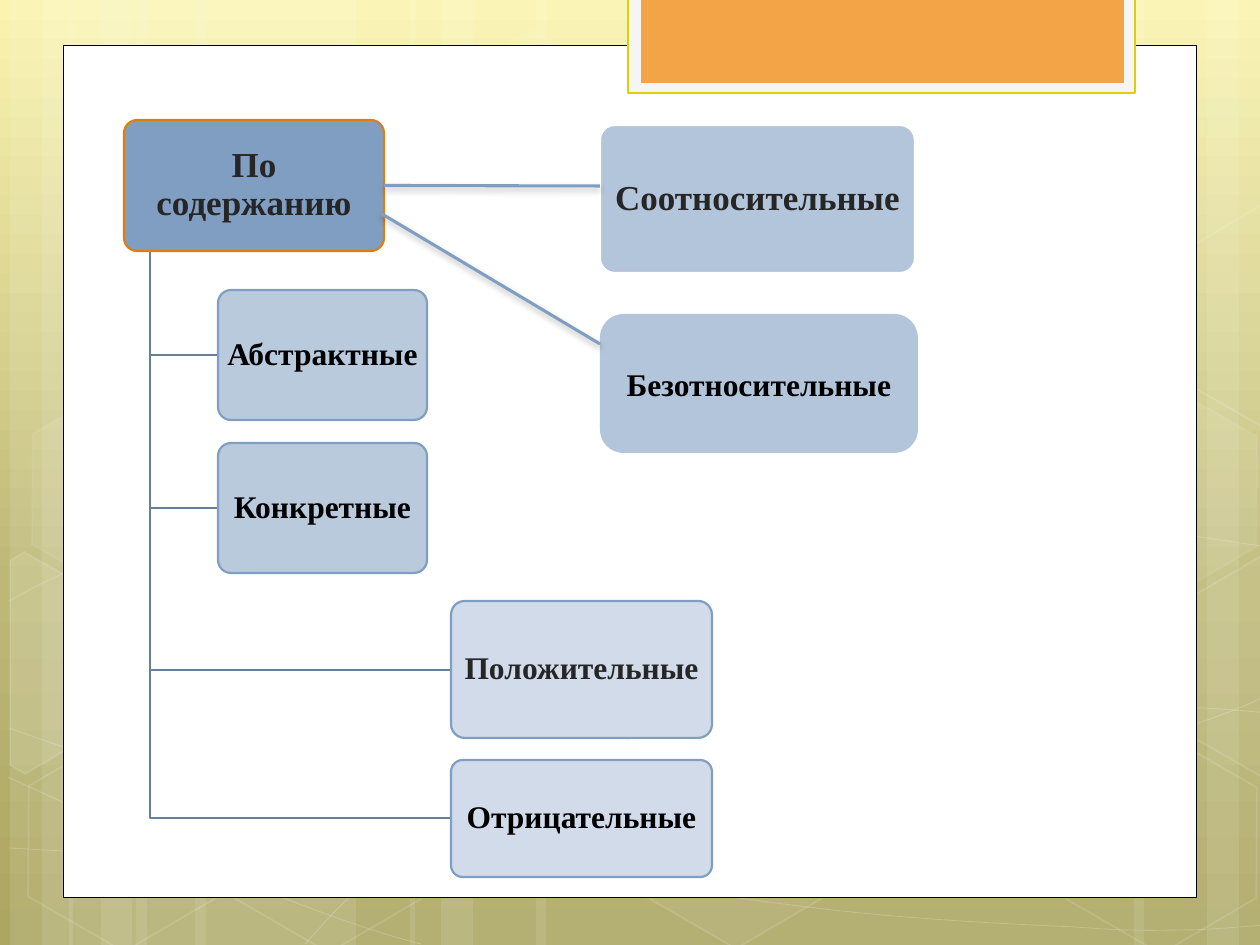
"""Build a slide that classifies concepts by content as a branching diagram."""
from copy import deepcopy
from math import cos, radians, sin

from lxml.etree import SubElement
from pptx import Presentation
from pptx.dml.color import RGBColor
from pptx.enum.shapes import MSO_CONNECTOR as Connector, MSO_SHAPE as Preset
from pptx.enum.text import MSO_ANCHOR as Anchor, PP_ALIGN as Align
from pptx.oxml.ns import qn
from pptx.util import Emu, Pt

PX = 914400 / 126
TILT = 30
COLORS = {
    "sky": "FAF4AF", "olive": "BDB876", "moss": "ACA662",
    "white": "FFFFFF", "black": "000000", "ink": "262626",
    "frame": "F5F5F5", "gold": "DFCF04", "orange": "F3A447", "rust": "DD7E0E",
    "steel": "809EC2", "branch": "677F9B", "blue": "B3C5DA", "pale": "CCD8E7",
}


def px(*lengths):
    return [Emu(round(length * PX)) for length in lengths]


def paint(shape, fill=None, line=None, width=1.25, fill_alpha=100, line_alpha=100):
    shape.shadow.inherit = False
    properties = shape._element.spPr
    for name, target, alpha in ((fill, shape.fill, fill_alpha), (line, shape.line.fill, line_alpha)):
        if name is None:
            target.background()
            continue
        target.solid()
        target.fore_color.rgb = RGBColor.from_string(COLORS[name])
        if alpha < 100:
            parent = properties if target is shape.fill else properties.find(qn("a:ln"))
            color = parent.find(qn("a:solidFill"))[0]
            SubElement(color, qn("a:alpha")).set("val", str(alpha * 1000))
    if line:
        shape.line.width = Pt(width)


presentation = Presentation()
presentation.slide_width, presentation.slide_height = px(1260, 945)
slide = presentation.slides.add_slide(presentation.slide_layouts[6])
shapes = slide.shapes

background = slide.background.fill
background.gradient()
background.gradient_angle = 270
stop_list = slide.element.find(".//" + qn("a:gsLst"))
stop_list.append(deepcopy(stop_list[0]))
for stop, name, position in zip(background.gradient_stops, ("sky", "olive", "moss"), (0, 0.62, 1)):
    stop.color.rgb = RGBColor.from_string(COLORS[name])
    stop.position = position

stripes = [
    (136, 220), (10, 63), (42, 105), (195, 220), (69, 63), (101, 105),
    (924, 220), (1207, 63), (1134, 105), (536, 388), (410, 63), (441, 105),
]
for left, width in stripes:
    stripe = shapes.add_shape(Preset.RECTANGLE, *px(left, 0, width, 945))
    paint(stripe, "white", fill_alpha=10)

curves = [
    [(9, 848), (77, 852), (145, 856), (239, 854), (334, 853), (451, 851), (577, 838),
     (703, 825), (882, 801), (998, 777), (1113, 753), (1231, 716), (1269, 694)],
    [(9, 601), (45, 581), (82, 562), (152, 543), (224, 524), (326, 496), (437, 488),
     (549, 479), (685, 478), (824, 488), (963, 498), (1193, 537), (1269, 547)],
    [(8, 777), (160, 847), (311, 916), (421, 944)],
    [(9, 728), (48, 742), (88, 756), (161, 776), (234, 795), (344, 827), (450, 848),
     (554, 869), (687, 892), (791, 905), (896, 919), (1008, 924), (1075, 927),
     (1140, 932), (1158, 930), (1191, 930), (1223, 929), (1246, 926), (1269, 925)],
    [(305, 944), (328, 919), (350, 893), (381, 871), (411, 848), (454, 823), (489, 805),
     (524, 788), (546, 780), (592, 767), (638, 755), (722, 737), (766, 728),
     (811, 720), (818, 720), (857, 717), (896, 713), (958, 709), (1000, 708),
     (1045, 707), (1116, 708), (1116, 708), (1153, 708), (1170, 708), (1201, 708),
     (1223, 709), (1245, 711), (1268, 713)],
]
for points in curves:
    builder = shapes.build_freeform(*px(*points[0]))
    builder.add_line_segments([px(*point) for point in points[1:]], close=False)
    curve = builder.convert_to_shape()
    outline = curve._element.find(".//" + qn("a:path"))
    segments = outline.findall(qn("a:lnTo"))
    for first in range(0, len(segments), 3):
        bezier = SubElement(outline, qn("a:cubicBezTo"))
        for segment in segments[first:first + 3]:
            bezier.append(segment[0])
            outline.remove(segment)
    paint(curve, line="white", width=0.5, line_alpha=20)

hexagons = [
    (421, 45, 4, 8), (626, 742, 6, 12), (14, 745, 0, 12), (18, 393, 7, 8),
    (219, 746, 0, 12), (949, 571, 10, 12), (1051, 747, 0, 12), (1051, 396, 7, 8),
]
for left, top, fill_alpha, line_alpha in hexagons:
    hexagon = shapes.add_shape(Preset.HEXAGON, *px(left, top, 220, 192))
    hexagon.adjustments[0] = 0.285
    hexagon.rotation = TILT
    paint(hexagon, "white" if fill_alpha else None, "white", 1, fill_alpha, line_alpha)

cut_hexagons = [
    (10, 45, 674, [(10, 561), (24, 552), (121, 607), (120, 718), (25, 774), (10, 765)]),
    (4, 1241, 655, [(1167, 611), (1261, 556), (1271, 562), (1271, 772), (1263, 777), (1167, 722)]),
    (0, 1241, 304, [(1167, 261), (1261, 205), (1272, 212), (1271, 422), (1263, 427), (1167, 372)]),
]
cosine, sine = cos(radians(TILT)), sin(radians(TILT))
for fill_alpha, center_x, center_y, corners in cut_hexagons:
    level = [px(center_x + (x - center_x) * cosine + (y - center_y) * sine,
                center_y - (x - center_x) * sine + (y - center_y) * cosine) for x, y in corners]
    builder = shapes.build_freeform(*level[0])
    builder.add_line_segments(level[1:])
    cut_hexagon = builder.convert_to_shape()
    cut_hexagon.rotation = TILT
    paint(cut_hexagon, "white" if fill_alpha else None, "white", 1, fill_alpha, 12)

panels = [
    (63, 45, 1134, 853, "white", "black", 0.5),
    (628, -3, 507, 96, "frame", "gold", 1.25),
    (641, -3, 483, 86, "orange", None, 0),
]
for left, top, width, height, fill, line, weight in panels:
    panel = shapes.add_shape(Preset.RECTANGLE, *px(left, top, width, height))
    paint(panel, fill, line, weight)

for left, middle in ((218, 355), (218, 508), (451, 670), (451, 818)):
    builder = shapes.build_freeform(*px(150, 250))
    builder.add_line_segments([px(150, middle), px(left, middle)], close=False)
    paint(builder.convert_to_shape(), line="branch")

boxes = [
    ("По содержанию", 124, 120, 260, 131, "steel", 100, "rust", 20, "ink", 0.1, 0.9),
    ("Абстрактные", 218, 290, 209, 130, "blue", 90, "steel", 18, "black", 0.1, 0.9),
    ("Конкретные", 218, 443, 209, 130, "blue", 90, "steel", 18, "black", 0.1, 0.9),
    ("Положительные", 451, 601, 261, 137, "pale", 90, "steel", 18, "ink", 0.1, 0.9),
    ("Отрицательные", 451, 760, 261, 117, "pale", 90, "steel", 18, "black", 0.1, 0.9),
    ("Соотносительные", 600, 125, 315, 148, "blue", 100, "white", 20, "ink", 0.1, 0.9),
    ("Безотносительные", 600, 314, 318, 139, "blue", 100, None, 18, "black", 0.17, 1.0),
]
concepts = {}
for text, left, top, width, height, fill, alpha, line, size, color, radius, spacing in boxes:
    box = shapes.add_shape(Preset.ROUNDED_RECTANGLE, *px(left, top, width, height))
    box.adjustments[0] = radius
    paint(box, fill, line, fill_alpha=alpha)
    frame = box.text_frame
    frame.word_wrap = True
    frame.vertical_anchor = Anchor.MIDDLE
    frame.margin_left, frame.margin_top, frame.margin_right, frame.margin_bottom = px(5, 4, 5, 4)
    paragraph = frame.paragraphs[0]
    paragraph.text = text
    paragraph.alignment = Align.CENTER
    paragraph.line_spacing = spacing
    paragraph.font.name = "Times New Roman"
    paragraph.font.size = Pt(size)
    paragraph.font.bold = True
    paragraph.font.color.rgb = RGBColor.from_string(COLORS[color])
    concepts[text] = box

straight = shapes.add_connector(Connector.STRAIGHT, *px(384, 186, 600, 186))
straight.begin_connect(concepts["По содержанию"], 3)
slanted = shapes.add_connector(Connector.STRAIGHT, *px(382, 214, 600, 344))
for connector in (straight, slanted):
    connector.line.width = Pt(1.75)
    connector.line.color.rgb = RGBColor.from_string(COLORS["steel"])
    effects = SubElement(connector._element.spPr, qn("a:effectLst"))
    shadow = SubElement(effects, qn("a:outerShdw"), blurRad=str(Pt(4)), dist=str(Pt(2)),
                        dir="5400000", rotWithShape="0")
    shade = SubElement(shadow, qn("a:srgbClr"), val=COLORS["black"])
    SubElement(shade, qn("a:alpha"), val="28000")

presentation.save("out.pptx")
